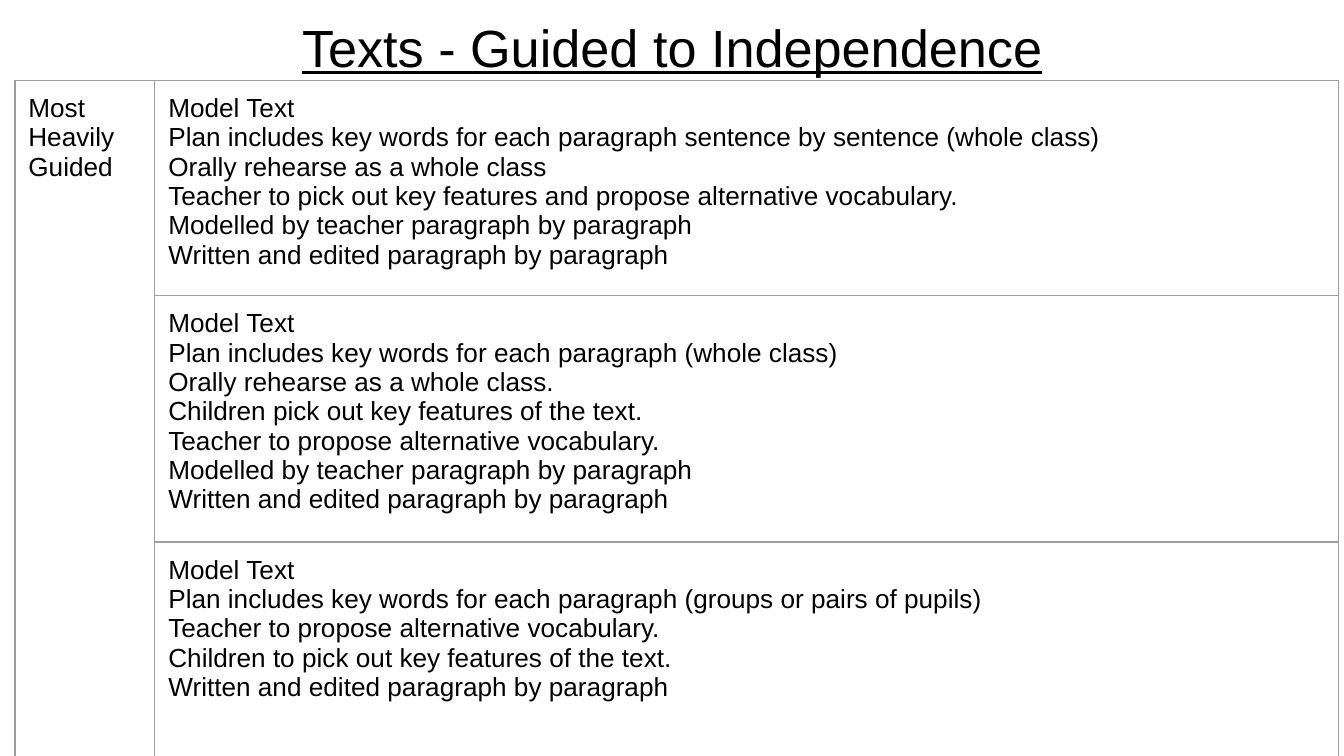
import pptx
import pptx.dml.color
import pptx.enum.text
import pptx.oxml.ns
import pptx.util
from lxml import etree

Pt = pptx.util.Pt
BLACK = pptx.dml.color.RGBColor(0x00, 0x00, 0x00)
BORDER_GRAY = pptx.dml.color.RGBColor(0x9E, 0x9E, 0x9E)
INSET = Pt(7.2)

COLUMN_WIDTHS = [75, 634]
ROW_HEIGHTS = [112, 124.3, 130]
GUIDANCE = [
    [
        "Model Text",
        "Plan includes key words for each paragraph sentence by sentence (whole class)",
        "Orally rehearse as a whole class",
        "Teacher to pick out key features and propose alternative vocabulary.",
        "Modelled by teacher paragraph by paragraph",
        "Written and edited paragraph by paragraph",
    ],
    [
        "Model Text",
        "Plan includes key words for each paragraph (whole class)",
        "Orally rehearse as a whole class.",
        "Children pick out key features of the text.",
        "Teacher to propose alternative vocabulary.",
        "Modelled by teacher paragraph by paragraph",
        "Written and edited paragraph by paragraph",
    ],
    [
        "Model Text",
        "Plan includes key words for each paragraph (groups or pairs of pupils)",
        "Teacher to propose alternative vocabulary.",
        "Children to pick out key features of the text.",
        "Written and edited paragraph by paragraph",
    ],
]


def format_text(text_frame, size):
    for paragraph in text_frame.paragraphs:
        for run in paragraph.runs:
            run.font.name = "Arial"
            run.font.size = Pt(size)
            run.font.color.rgb = BLACK


def add_borders(cell):
    properties = cell._tc.get_or_add_tcPr()
    for position, side in enumerate(["a:lnL", "a:lnR", "a:lnT", "a:lnB"]):
        line = etree.Element(pptx.oxml.ns.qn(side), w=str(Pt(0.75)))
        fill = etree.SubElement(line, pptx.oxml.ns.qn("a:solidFill"))
        etree.SubElement(fill, pptx.oxml.ns.qn("a:srgbClr"), val=str(BORDER_GRAY))
        properties.insert(position, line)


presentation = pptx.Presentation()
presentation.slide_width = Pt(720)
presentation.slide_height = Pt(405)
slide = presentation.slides.add_slide(presentation.slide_layouts[6])

title = slide.shapes.add_textbox(Pt(0), Pt(-2), Pt(720), Pt(45))
title_frame = title.text_frame
title_frame.word_wrap = True
title_frame.margin_left = title_frame.margin_right = title_frame.margin_bottom = INSET
title_frame.margin_top = Pt(10)
title_frame.text = "Texts - Guided to Independence"
title_frame.paragraphs[0].alignment = pptx.enum.text.PP_ALIGN.CENTER
title_frame.paragraphs[0].runs[0].font.underline = True
format_text(title_frame, 28)

table = slide.shapes.add_table(
    len(ROW_HEIGHTS), len(COLUMN_WIDTHS), Pt(8), Pt(43),
    Pt(sum(COLUMN_WIDTHS)), Pt(sum(ROW_HEIGHTS)),
).table
table.first_row = False
table.horz_banding = False
for column, width in zip(table.columns, COLUMN_WIDTHS):
    column.width = Pt(width)
for row, height in zip(table.rows, ROW_HEIGHTS):
    row.height = Pt(height)

table.cell(0, 0).merge(table.cell(len(ROW_HEIGHTS) - 1, 0))
table.cell(0, 0).text_frame.text = "Most Heavily Guided"
for row_index, lines in enumerate(GUIDANCE):
    table.cell(row_index, 1).text_frame.text = "\n".join(lines)

for cell in table.iter_cells():
    cell.margin_left = cell.margin_right = INSET
    cell.margin_top = cell.margin_bottom = INSET
    cell.fill.background()
    add_borders(cell)
    format_text(cell.text_frame, 14)

presentation.save("out.pptx")
